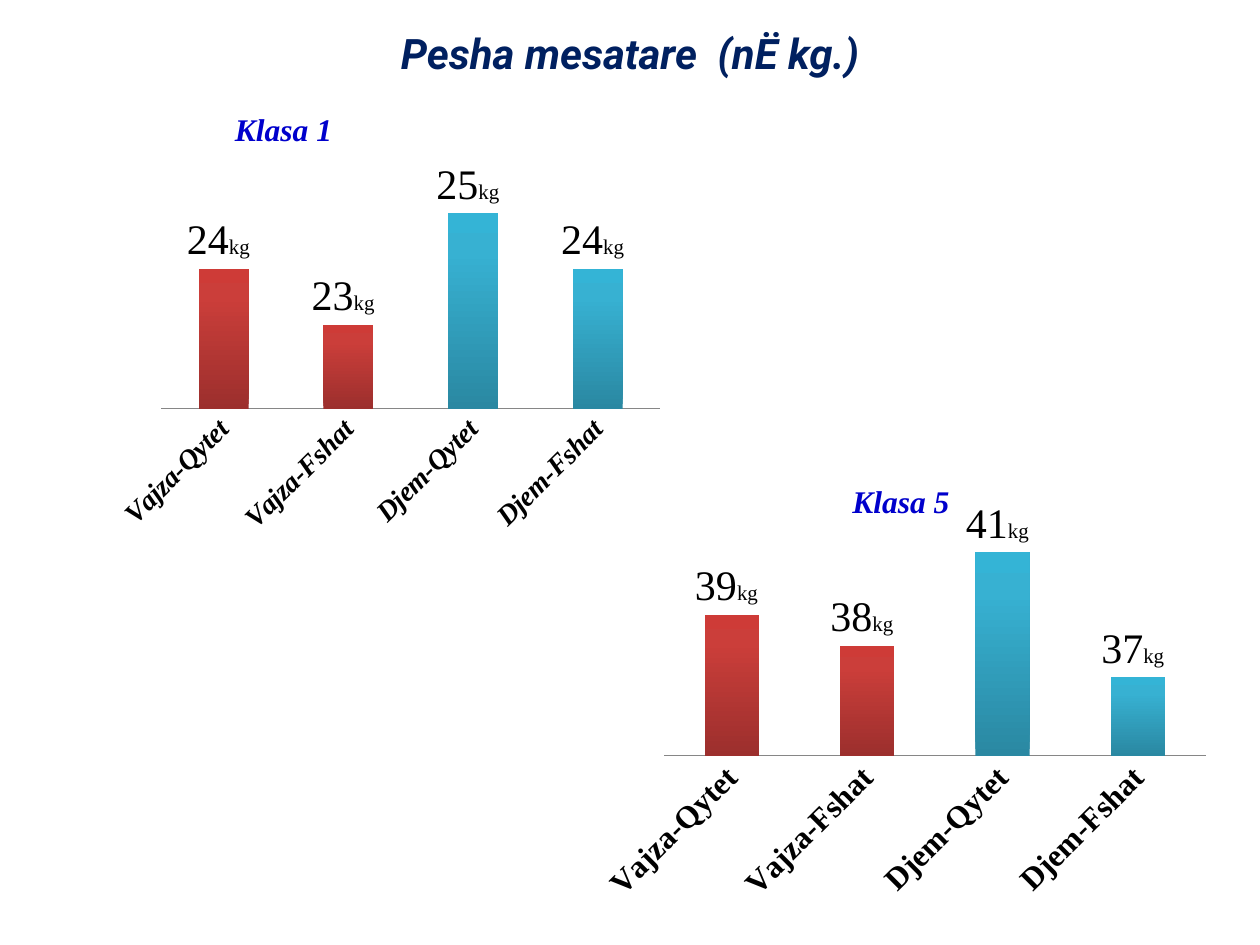
"""Build the slide comparing average weights of pupils in two classes."""
from copy import deepcopy

from lxml import etree
from pptx import Presentation
from pptx.chart.data import CategoryChartData
from pptx.dml.color import RGBColor
from pptx.enum.chart import XL_CHART_TYPE, XL_LABEL_POSITION, XL_TICK_LABEL_POSITION, XL_TICK_MARK
from pptx.enum.text import MSO_ANCHOR, PP_ALIGN
from pptx.oxml.ns import qn
from pptx.util import Inches, Pt

COLUMN = XL_CHART_TYPE.COLUMN_CLUSTERED
OUTSIDE_END = XL_LABEL_POSITION.OUTSIDE_END
NEXT_TO_AXIS = XL_TICK_LABEL_POSITION.NEXT_TO_AXIS
NO_TICK = XL_TICK_MARK.NONE
MIDDLE = MSO_ANCHOR.MIDDLE
CENTER = PP_ALIGN.CENTER

COLORS = {"title": "002060", "class": "0000CC", "text": "000000", "axis": "868686"}
GRADIENTS = {
    "girls": [(0, "9C2F2D"), (0.8, "CB3E3A"), (1, "CE3B37")],
    "boys": [(0, "2A88A2"), (0.8, "37B1D2"), (1, "34B4D6")],
}
GROUPS = ["girls", "girls", "boys", "boys"]
CATEGORIES = ["Vajza-Qytet", "Vajza-Fshat", "Djem-Qytet", " Djem-Fshat"]
SERIF = "Times New Roman"
NUMBER_FORMAT = r"#,##0_);\(#,##0\)"
CHARTS = [
    {"name": "Klasa 1", "values": [24, 23, 25, 24], "box": (0.83, 0.83, 4.5, 3.5),
     "scale": (21.5, 26), "plot": {"x": 0.1, "y": 0.12, "w": 0.88, "h": 0.57},
     "title": {"x": 0.22, "y": -0.01}, "size": 16, "italic": True, "line": 0.75},
    {"name": "Klasa 5", "values": [39, 38, 41, 37], "box": (4.67, 3.67, 5, 3.58),
     "scale": (34.5, 42), "plot": {"x": 0.12, "y": 0.13, "w": 0.86, "h": 0.52},
     "title": {"x": 0.41, "y": 0.03}, "size": 18, "italic": False, "line": 1},
]


def style(font, color, **formats):
    font.color.rgb = RGBColor.from_string(COLORS[color])
    for key, value in formats.items():
        setattr(font, key, value)


def place(parent, index, target, sizes):
    for old in parent.findall(qn("c:layout")):
        parent.remove(old)
    layout = etree.Element(qn("c:layout"))
    manual = etree.SubElement(layout, qn("c:manualLayout"))
    items = {"layoutTarget": target} if target else {}
    items.update({"xMode": "edge", "yMode": "edge"}, **sizes)
    for key, value in items.items():
        etree.SubElement(manual, qn(f"c:{key}")).set("val", str(value))
    parent.insert(index, layout)


prs = Presentation()
prs.slide_width, prs.slide_height = Inches(10), Inches(7.5)
s = prs.slides.add_slide(prs.slide_layouts[6])

sp = s.shapes.add_textbox(0, 0, Inches(10), Inches(0.83))
tf = sp.text_frame
tf.word_wrap = True
tf.vertical_anchor = MIDDLE
p = tf.paragraphs[0]
p.alignment = CENTER
r = p.add_run()
r.text = "Pesha mesatare  (nË kg.)"
style(r.font, "title", name="Roboto", size=Pt(24), bold=True, italic=True)

for item in CHARTS:
    data = CategoryChartData()
    data.categories = CATEGORIES
    data.add_series(item["name"], item["values"])
    chart = s.shapes.add_chart(COLUMN, *map(Inches, item["box"]), data).chart
    chart.has_legend = False
    style(chart.font, "text", name="Calibri", size=Pt(10))

    chart.has_title = True
    p = chart.chart_title.text_frame.paragraphs[0]
    r = p.add_run()
    r.text = item["name"]
    style(r.font, "class", name=SERIF, size=Pt(18), bold=True, italic=True)
    root = chart.element
    place(root.find(".//" + qn("c:title")), 1, None, item["title"])
    place(root.find(".//" + qn("c:plotArea")), 0, "inner", item["plot"])

    axis = chart.value_axis
    axis.minimum_scale, axis.maximum_scale = item["scale"]
    axis.has_major_gridlines = False
    axis.tick_labels.number_format = NUMBER_FORMAT
    axis.tick_labels.number_format_is_linked = False
    axis.visible = False

    axis = chart.category_axis
    axis.major_tick_mark = NO_TICK
    axis.tick_label_position = NEXT_TO_AXIS
    axis.format.line.width = Pt(item["line"])
    axis.format.line.color.rgb = RGBColor.from_string(COLORS["axis"])
    style(axis.tick_labels.font, "text", name=SERIF, size=Pt(item["size"]),
          bold=True, italic=item["italic"])
    body = root.find(".//" + qn("c:catAx")).find(qn("c:txPr")).find(qn("a:bodyPr"))
    body.set("rot", "-2700000")
    body.set("vert", "horz")

    plot = chart.plots[0]
    plot.vary_by_categories = False
    plot.gap_width = 150
    plot.overlap = -25
    series = plot.series[0]
    series.invert_if_negative = False
    labels = series.data_labels
    labels.show_value = True
    labels.number_format = NUMBER_FORMAT
    labels.number_format_is_linked = False
    labels.position = OUTSIDE_END
    style(labels.font, "text", name=SERIF, size=Pt(24), bold=True)
    for i, (value, group) in enumerate(zip(item["values"], GROUPS)):
        point = series.points[i]
        fill = point.format.fill
        fill.gradient()
        fill.gradient_angle = 90
        stops = list(root.iter(qn("a:gsLst")))[-1]
        stops.append(deepcopy(stops[0]))
        for stop, (position, color) in zip(fill.gradient_stops, GRADIENTS[group]):
            stop.position = position
            stop.color.rgb = RGBColor.from_string(color)
        label = point.data_label
        p = label.text_frame.paragraphs[0]
        for text, size in ((str(value), 24), ("kg", 12), (" ", 24)):
            r = p.add_run()
            r.text = text
            style(r.font, "text", name=SERIF, size=Pt(size), bold=False)
        label.position = OUTSIDE_END

prs.save("out.pptx")
